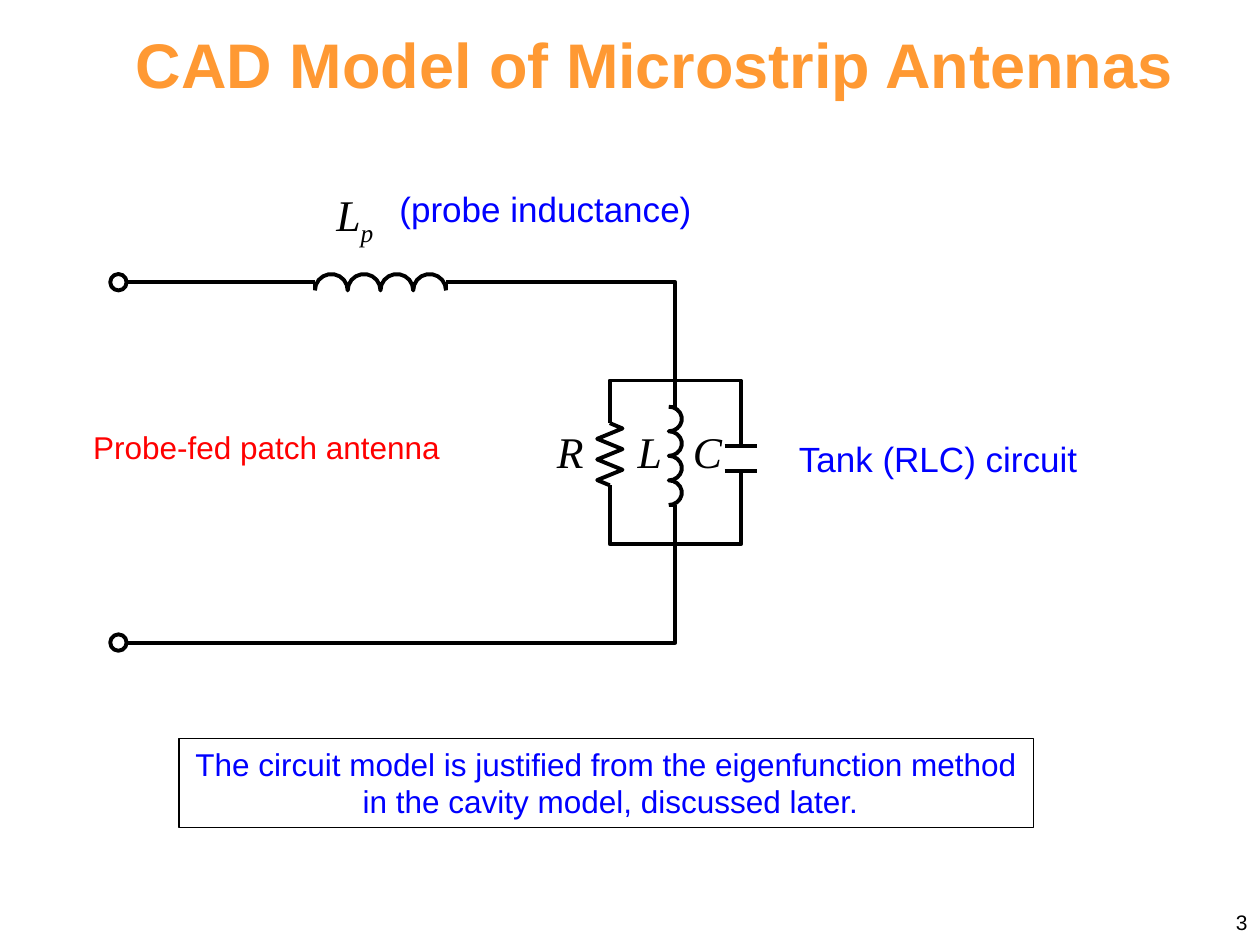
from math import cos, pi, sin

from pptx import Presentation
from pptx.dml.color import RGBColor
from pptx.enum.shapes import MSO_CONNECTOR, MSO_SHAPE
from pptx.enum.text import MSO_ANCHOR, MSO_AUTO_SIZE, PP_ALIGN as AL
from pptx.oxml.ns import qn
from pptx.util import Inches, Pt

COLORS = {"title": "FF9933", "ink": "000000", "note": "0000FF",
          "feed": "FF0000", "paper": "FFFFFF"}
C = {k: RGBColor.from_string(v) for k, v in COLORS.items()}
SANS, SERIF = "Arial", "Times New Roman"

# Circuit grid: square cells, origin at the upper terminal
CELL, LEFT, TOP = 0.13, 0.94, 2.24


def at(col, row):
    return Inches(LEFT + col * CELL), Inches(TOP + row * CELL)


def add_text(x, y, w, h, lines, size, color, font=SANS, align=AL.LEFT, inset=True):
    box = s.shapes.add_textbox(Inches(x), Inches(y), Inches(w), Inches(h))
    tf = box.text_frame
    tf.word_wrap = False
    tf.auto_size = MSO_AUTO_SIZE.SHAPE_TO_FIT_TEXT
    if not inset:
        tf.margin_left = tf.margin_right = tf.margin_top = tf.margin_bottom = 0
    for i, line in enumerate(lines):
        p = tf.paragraphs[0] if i == 0 else tf.add_paragraph()
        p.add_run().text = line
        p.alignment = align
        p.font.name, p.font.size = font, Pt(size)
        p.font.italic = font == SERIF
        p.font.color.rgb = C[color]
    return box


prs = Presentation()
prs.slide_width, prs.slide_height = Inches(10), Inches(7.5)
s = prs.slides.add_slide(prs.slide_layouts[5])

# Title
title = s.shapes.title
title.left, title.top, title.width, title.height = map(Inches, (0.64, 0.16, 9.11, 0.68))
tf = title.text_frame
tf.text = "CAD Model of Microstrip Antennas"
tf.auto_size = MSO_AUTO_SIZE.NONE
tf.vertical_anchor = MSO_ANCHOR.MIDDLE
p = tf.paragraphs[0]
p.alignment = AL.CENTER
p.font.name, p.font.size, p.font.bold = SANS, Pt(36), True
p.font.color.rgb = C["title"]

# Coils of four half-turns, and the resistor zigzag
STEPS, TURNS = 9, 4
turns = [(2 * n + 1 - cos(pi * k / STEPS), sin(pi * k / STEPS))
         for n in range(TURNS) for k in range(STEPS + 1)]
probe_coil = [(12 + u, 0.5 - v) for u, v in turns]
tank_coil = [(33.6 + 0.8 * v, 7.6 + 0.75 * u) for u, v in turns]
zigzag = [(30 + 0.77 * (-1) ** n, 8.93 + 0.63 * n) for n in range(6)]
resistor = [(30, 8.6), *zigzag, (30, 12.4)]

# Coils, resistor and bent wires
for path_points in (
    probe_coil, tank_coil, resistor,
    [(20, 0), (34, 0), (34, 7.6)],
    [(34, 13.6), (34, 22), (0, 22)],
    [(38, 10), (38, 6), (30, 6), (30, 8.6)],
    [(38, 11.5), (38, 16), (30, 16), (30, 12.4)],
):
    points = [at(*pt) for pt in path_points]
    builder = s.shapes.build_freeform(*points[0], scale=1.0)
    builder.add_line_segments(points[1:], close=False)
    sp = builder.convert_to_shape()
    sp.shadow.inherit = False
    sp.fill.background()
    sp.line.color.rgb, sp.line.width = C["ink"], Pt(2.25)

# Straight wires: input lead, coil ends, capacitor plates
for start, end in (
    ((12, 0), (0, 0)),
    ((12, 0.5), (12, 0)), ((20, 0.5), (20, 0)),
    ((33.6, 7.6), (34, 7.6)), ((33.6, 13.6), (34, 13.6)),
    ((37, 10), (39, 10)), ((37, 11.5), (39, 11.5)),
):
    wire = s.shapes.add_connector(MSO_CONNECTOR.STRAIGHT, *at(*start), *at(*end))
    wire.line.color.rgb, wire.line.width = C["ink"], Pt(2.25)
    sp_pr = wire._element.spPr
    sp_pr.append(sp_pr.makeelement(qn("a:effectLst"), {}))

# Terminals
for row in (0, 22):
    sp = s.shapes.add_shape(MSO_SHAPE.OVAL, *at(-0.5, row - 0.5),
                            Inches(CELL), Inches(CELL))
    sp.shadow.inherit = False
    sp.fill.solid()
    sp.fill.fore_color.rgb = C["paper"]
    sp.line.color.rgb, sp.line.width = C["ink"], Pt(2.25)

# Component symbols
for symbol, x, y, w in (("L", 2.67, 1.49, 0.5), ("R", 4.42, 3.37, 0.21),
                        ("L", 5.06, 3.37, 0.19), ("C", 5.5, 3.37, 0.23)):
    box = add_text(x, y, w, 0.42, [symbol], 25, "ink", SERIF, inset=False)
    if y < TOP:  # the probe inductance carries a subscript
        box.text_frame.word_wrap = True
        r = box.text_frame.paragraphs[0].add_run()
        r.text = "p"
        r.font._element.set("baseline", "-25000")

# Labels
add_text(3.17, 1.49, 2.34, 0.34, ["(probe inductance)"], 20, "note", inset=False)
add_text(6.34, 3.47, 2.23, 0.34, ["Tank (RLC) circuit"], 20, "note", inset=False)
add_text(0.64, 3.35, 2.98, 0.4, ["Probe-fed patch antenna"], 18, "feed")

# Framed remark
remark = add_text(1.42, 5.86, 6.78, 0.71,
                  ["The circuit model is justified from the eigenfunction method",
                   " in the cavity model, discussed later."],
                  18, "note", align=AL.CENTER)
remark.line.color.rgb, remark.line.width = C["ink"], Pt(0.75)

# Slide number
number = add_text(7.67, 7.17, 2.33, 0.3, ["3"], 12, "ink", align=AL.RIGHT)
number.text_frame.word_wrap = True

prs.save("out.pptx")
